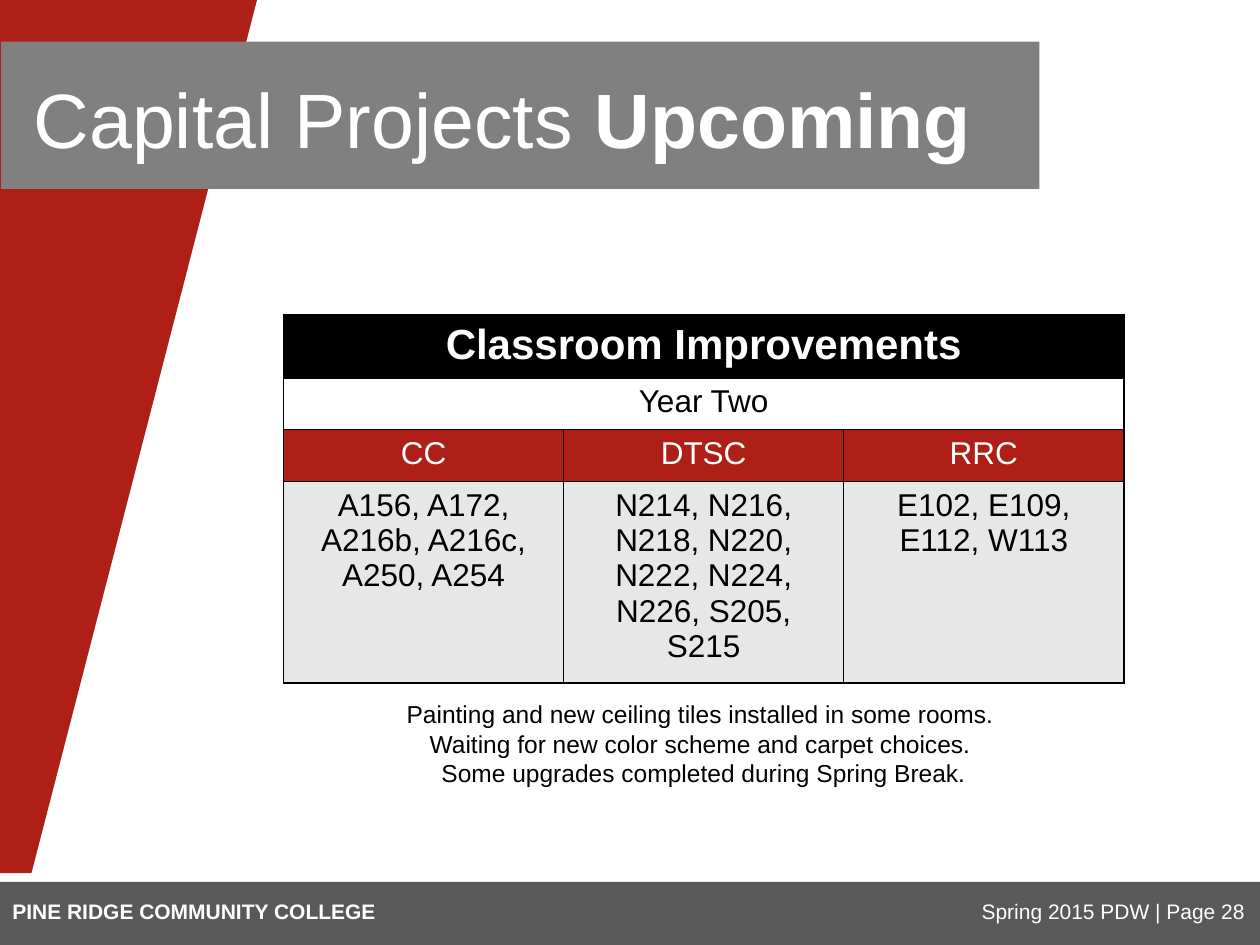
from pptx import Presentation
from pptx.dml.color import RGBColor
from pptx.enum.shapes import MSO_SHAPE as Shape
from pptx.enum.text import MSO_AUTO_SIZE as AutoSize, PP_ALIGN as Align
from pptx.oxml import parse_xml
from pptx.oxml.ns import nsdecls
from pptx.util import Inches, Pt

FONT = "Arial"
COLORS = {
    "red": "AD1F17",
    "footer": "595959",
    "banner": "808080",
    "panel": "E7E7E7",
    "white": "FFFFFF",
    "black": "000000",
}


def color(name):
    return RGBColor.from_string(COLORS[name])


def style(font, size, name, bold=False):
    font.name = FONT
    font.size = Pt(size)
    font.bold = bold
    font.color.rgb = color(name)


def paint(shape, name):
    shape.shadow.inherit = False
    shape.fill.solid()
    shape.fill.fore_color.rgb = color(name)
    shape.line.fill.background()


def add_bar(page, box, name):
    bar = page.shapes.add_shape(Shape.RECTANGLE, *map(Inches, box))
    paint(bar, name)


def add_text(page, box, lines, size, name, align=Align.LEFT, bold=False):
    frame = page.shapes.add_textbox(*map(Inches, box)).text_frame
    frame.word_wrap = True
    for index, line in enumerate(lines):
        para = frame.add_paragraph() if index else frame.paragraphs[0]
        para.text = line
        para.alignment = align
        style(para.font, size, name, bold)
    return frame


def add_slanted_band(page, box):
    left, top, width, height = box
    foot = 0.25
    builder = page.shapes.build_freeform(Inches(left), Inches(top))
    corners = [(left + width, top), (left + foot, top + height), (left, top + height)]
    builder.add_line_segments([(Inches(x), Inches(y)) for x, y in corners], close=True)
    paint(builder.convert_to_shape(), "red")


def add_footer(page, box):
    left, top, width, height = box
    add_bar(page, box, "footer")
    text_width, text_top = 4.4, top + 0.08
    right = left + width - text_width - 0.02
    labels = [
        (right, "Spring 2015 PDW | Page 28", Align.RIGHT, False),
        (left, "PINE RIDGE COMMUNITY COLLEGE", Align.LEFT, True),
    ]
    for x, label, align, bold in labels:
        frame = add_text(page, (x, text_top, text_width, 0.3), [label], 12, "white", align, bold)
        frame.auto_size = AutoSize.SHAPE_TO_FIT_TEXT


def add_title(page, box):
    left, top, width, height = box
    add_bar(page, box, "banner")
    title_box = (left + 0.16, top + 0.14, 9, height - 0.14)
    frame = add_text(page, title_box, ["Capital Projects"], 44, "white")
    frame.margin_top = Inches(0.1)
    span = frame.paragraphs[0].add_run()
    span.text = " Upcoming"
    span.font.bold = True


def add_borders(cell):
    properties = cell._tc.get_or_add_tcPr()
    for index, side in enumerate(("lnL", "lnR", "lnT", "lnB")):
        border = parse_xml(
            f'<a:{side} {nsdecls("a")} w="{Pt(1)}"><a:solidFill>'
            f'<a:srgbClr val="{COLORS["black"]}"/></a:solidFill></a:{side}>'
        )
        properties.insert(index, border)


def add_classroom_table(page, box):
    rows = [
        (0.5, ["Classroom Improvements"], 24, "white", "black", True),
        (0.41, ["Year Two"], 18, "black", "white", False),
        (0.41, ["CC", "DTSC", "RRC"], 18, "white", "red", False),
        (1.6, [
            "A156, A172, A216b, A216c, A250, A254",
            "N214, N216, N218, N220, N222, N224, N226, S205, S215",
            "E102, E109, E112, W113",
        ], 18, "black", "panel", False),
    ]
    columns = 3
    table = page.shapes.add_table(len(rows), columns, *map(Inches, box)).table
    table.first_row = False
    table.horz_banding = False
    for column in table.columns:
        column.width = Inches(box[2] / columns)
    for index, (height, texts, size, ink, fill, bold) in enumerate(rows):
        table.rows[index].height = Inches(height)
        for position in range(columns):
            cell = table.cell(index, position)
            cell.fill.solid()
            cell.fill.fore_color.rgb = color(fill)
            add_borders(cell)
        if len(texts) == 1:
            table.cell(index, 0).merge(table.cell(index, columns - 1))
        for position, text in enumerate(texts):
            para = table.cell(index, position).text_frame.paragraphs[0]
            para.text = text
            para.alignment = Align.CENTER
            style(para.font, size, ink, bold)


def add_notice(page, box):
    lines = [
        "Painting and new ceiling tiles installed in some rooms. \v"
        "Waiting for new color scheme and carpet choices. ",
        "Some upgrades completed during Spring Break.",
    ]
    frame = add_text(page, box, lines, 14, "black", Align.CENTER)
    frame.auto_size = AutoSize.SHAPE_TO_FIT_TEXT


def main():
    deck = Presentation()
    deck.slide_width = Inches(10)
    deck.slide_height = Inches(7.5)
    page = deck.slides.add_slide(deck.slide_layouts[6])
    add_slanted_band(page, (0, 0, 2.04, 6.93))
    add_footer(page, (0, 7, 10, 0.5))
    add_title(page, (0.01, 0.33, 8.24, 1.17))
    add_classroom_table(page, (2.25, 2.5, 6.67, 2.92))
    add_notice(page, (2.25, 5.5, 6.67, 0.81))
    deck.save("out.pptx")


if __name__ == "__main__":
    main()
